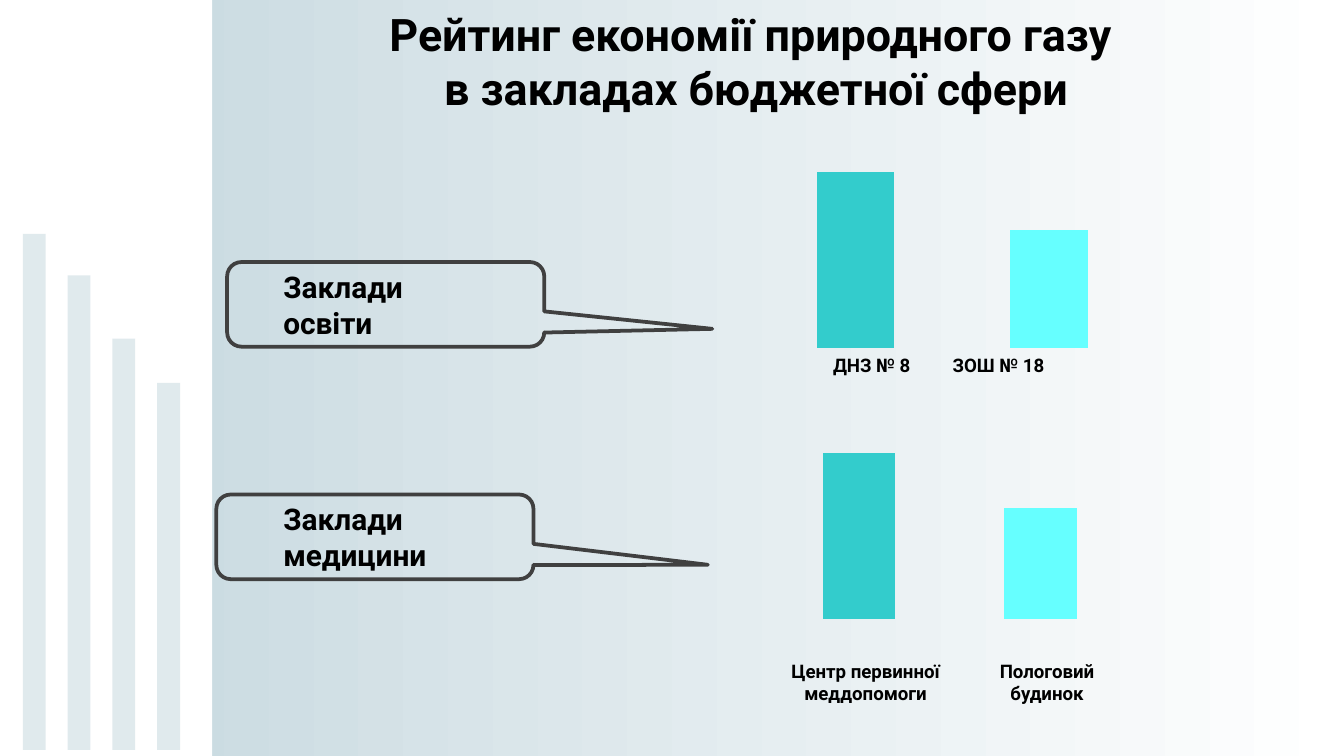
import dataclasses
import typing

import lxml.etree
import pptx
import pptx.chart.data
import pptx.dml.color
import pptx.enum.chart
import pptx.enum.shapes
import pptx.enum.text
import pptx.oxml
import pptx.oxml.ns
import pptx.util
from pptx.util import Inches

COLORS = {
    "mist": "C3D6DD",
    "white": "FFFFFF",
    "black": "000000",
    "outline": "404040",
    "leader": "33CCCC",
    "second": "66FFFF",
}
SHAPES = pptx.enum.shapes.MSO_SHAPE
ALIGN = pptx.enum.text.PP_ALIGN


@dataclasses.dataclass(frozen=True)
class Box:
    left: float
    top: float
    width: float
    height: float

    def lengths(self) -> tuple:
        return tuple(Inches(v) for v in dataclasses.astuple(self))


@dataclasses.dataclass(frozen=True)
class Label:
    box: Box
    lines: tuple[str, ...]
    size: int
    align: typing.Any = ALIGN.LEFT
    tab: float = 0


@dataclasses.dataclass(frozen=True)
class Callout:
    box: Box
    tip: tuple[float, float]


def rgb(name: str) -> pptx.dml.color.RGBColor:
    return pptx.dml.color.RGBColor.from_string(COLORS[name])


def write_lines(frame, label: Label) -> None:
    frame.word_wrap = True
    frame.vertical_anchor = pptx.enum.text.MSO_ANCHOR.TOP
    frame.text = "\n".join(label.lines)
    for paragraph in frame.paragraphs:
        paragraph.alignment = label.align
        if label.tab:
            tabs = lxml.etree.SubElement(
                paragraph._p.get_or_add_pPr(), pptx.oxml.ns.qn("a:tabLst"))
            lxml.etree.SubElement(tabs, pptx.oxml.ns.qn("a:tab"),
                                  pos=str(Inches(label.tab)), algn="l")
        font = paragraph.font
        font.name = "Roboto"
        font.size = pptx.util.Pt(label.size)
        font.bold = True
        font.color.rgb = rgb("black")


def add_label(slide, label: Label) -> None:
    write_lines(slide.shapes.add_textbox(*label.box.lengths()).text_frame, label)


def add_panel(slide, box: Box, color: str, opacity: int = 100) -> None:
    panel = slide.shapes.add_shape(SHAPES.RECTANGLE, *box.lengths())
    panel.shadow.inherit = False
    panel.line.fill.background()
    panel.fill.solid()
    panel.fill.fore_color.rgb = rgb(color)
    if opacity < 100:
        tint = panel._element.spPr.find(".//" + pptx.oxml.ns.qn("a:srgbClr"))
        lxml.etree.SubElement(tint, pptx.oxml.ns.qn("a:alpha"), val=str(opacity * 1000))


def add_callout(slide, callout: Callout) -> None:
    bubble = slide.shapes.add_shape(
        SHAPES.ROUNDED_RECTANGULAR_CALLOUT, *callout.box.lengths())
    bubble.shadow.inherit = False
    bubble.fill.background()
    bubble.line.color.rgb = rgb("outline")
    bubble.line.width = pptx.util.Pt(2)
    for index, value in enumerate((*callout.tip, 0.17)):
        bubble.adjustments[index] = value


def add_rating_chart(slide, box: Box) -> None:
    data = pptx.chart.data.CategoryChartData()
    data.categories = ["1", "2"]
    data.add_series("Series 1", (100, 67))
    chart = slide.shapes.add_chart(
        pptx.enum.chart.XL_CHART_TYPE.COLUMN_CLUSTERED, *box.lengths(), data).chart
    chart.has_legend = False
    chart.has_title = False
    chart.font.name = "Arial"
    chart.font.size = pptx.util.Pt(24)
    chart.font.color.rgb = rgb("black")
    chart.category_axis.visible = False
    chart.value_axis.visible = False
    chart.value_axis.has_major_gridlines = False
    chart.value_axis.minimum_scale = 0
    chart.value_axis.maximum_scale = 132

    plot = chart.plots[0]
    plot.vary_by_categories = False
    plot.gap_width = 150
    for index, color in enumerate(("leader", "second")):
        fill = plot.series[0].points[index].format.fill
        fill.solid()
        fill.fore_color.rgb = rgb(color)

    # Fixed inner plot area
    plot_area = chart._chartSpace.chart.plotArea
    for old in plot_area.findall(pptx.oxml.ns.qn("c:layout")):
        plot_area.remove(old)
    plot_area.insert(0, pptx.oxml.parse_xml(
        f'<c:layout {pptx.oxml.ns.nsdecls("c")}><c:manualLayout>'
        '<c:layoutTarget val="inner"/><c:xMode val="edge"/><c:yMode val="edge"/>'
        '<c:x val="0.1"/><c:y val="0.04"/><c:w val="0.88"/><c:h val="0.74"/>'
        '</c:manualLayout></c:layout>'))


TITLE = Label(Box(1.61, 0, 7.95, 0.91),
              ("Рейтинг економії природного газу", " в закладах бюджетної сфери"),
              24, ALIGN.CENTER)
LABELS = (
    Label(Box(6.1, 2.58, 2.1, 0.28), ("ДНЗ № 8\tЗОШ № 18",), 10, tab=0.89),
    Label(Box(5.69, 4.86, 1.5, 0.44), ("Центр первинної", "меддопомоги"),
          10, ALIGN.CENTER),
    Label(Box(7.28, 4.86, 1.02, 0.44), ("Пологовий", "будинок"), 10, ALIGN.CENTER),
    Label(Box(2.01, 1.95, 1.26, 0.64), ("Заклади", "освіти"), 16),
    Label(Box(2.01, 3.68, 1.58, 0.64), ("Заклади", "медицини"), 16),
)
CALLOUTS = (
    Callout(Box(1.61, 3.68, 2.36, 0.63), (1.05, 0.33)),
    Callout(Box(1.69, 1.95, 2.36, 0.63), (1.03, 0.29)),
)
CHARTS = (Box(5.32, 0.77, 3.27, 2.33), Box(5.41, 2.89, 3.07, 2.2))
STRIPE_TOPS = (1.74, 2.05, 2.52, 2.85)
STRIPE_BOTTOM = 5.58


def main() -> None:
    deck = pptx.Presentation()
    deck.slide_width = Inches(10)
    deck.slide_height = deck.slide_width * 9 // 16
    slide = deck.slides.add_slide(deck.slide_layouts[5])

    # Background fading to white on the right
    backdrop = slide.background.fill
    backdrop.gradient()
    backdrop.gradient_angle = 0
    for stop, color in zip(backdrop.gradient_stops, ("mist", "white")):
        stop.color.rgb = rgb(color)

    # Side panel with descending stripes
    add_panel(slide, Box(-0.08, -0.01, 1.66, 5.64), "white")
    for index, top in enumerate(STRIPE_TOPS):
        add_panel(slide, Box(0.17 + index / 3, top, 0.17, STRIPE_BOTTOM - top),
                  "mist", 50)

    # Title
    heading = slide.shapes.title
    heading.left, heading.top, heading.width, heading.height = TITLE.box.lengths()
    write_lines(heading.text_frame, TITLE)
    heading.text_frame.auto_size = pptx.enum.text.MSO_AUTO_SIZE.NONE

    # Ratings, callouts and captions
    for box in CHARTS:
        add_rating_chart(slide, box)
    for callout in CALLOUTS:
        add_callout(slide, callout)
    for label in LABELS:
        add_label(slide, label)

    deck.save("out.pptx")


if __name__ == "__main__":
    main()
